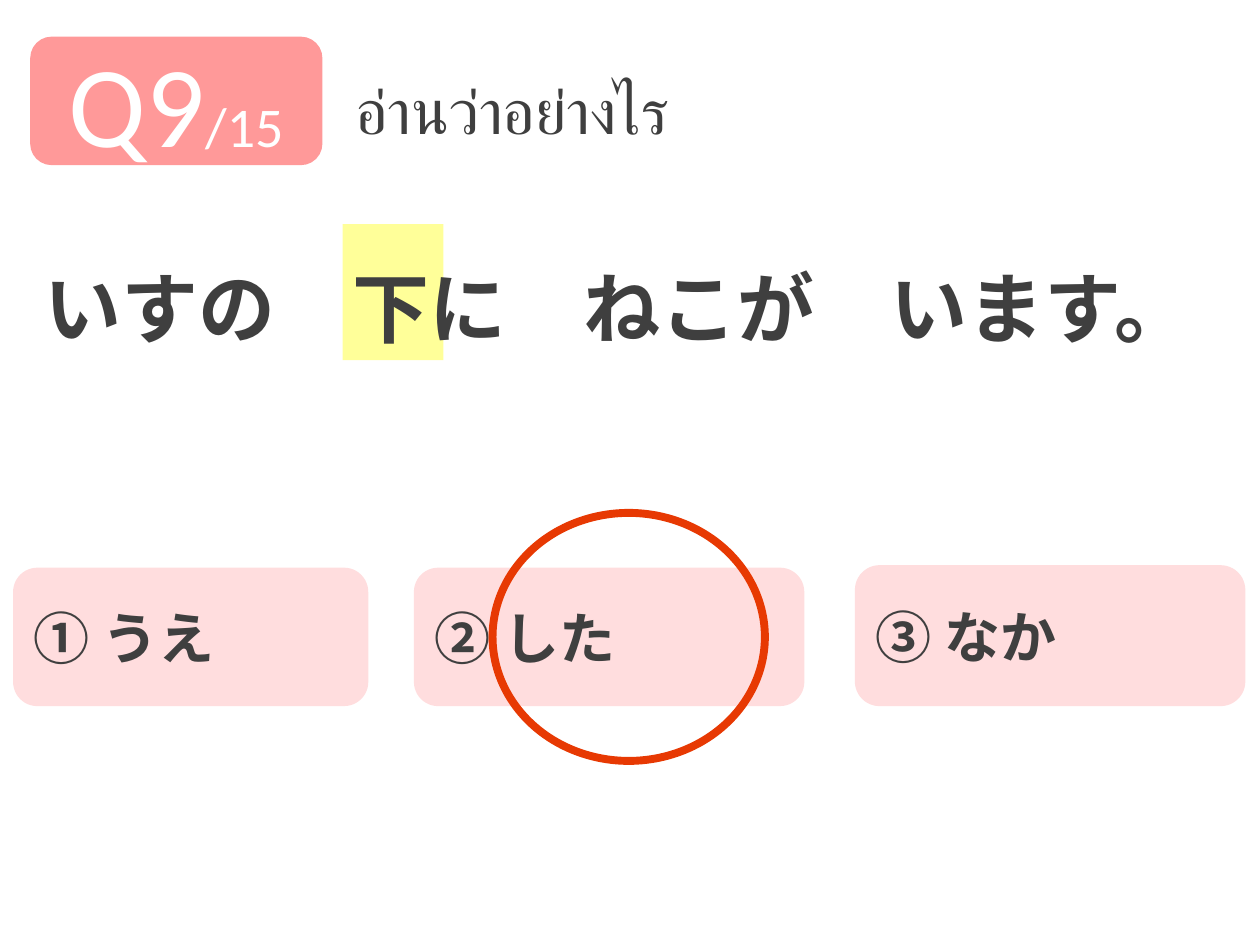
from dataclasses import dataclass

from pptx import Presentation
from pptx.dml.color import RGBColor
from pptx.enum.shapes import MSO_SHAPE
from pptx.enum.text import MSO_ANCHOR, MSO_AUTO_SIZE, PP_ALIGN
from pptx.util import Cm, Pt

RECT, ROUND, OVAL = MSO_SHAPE.RECTANGLE, MSO_SHAPE.ROUNDED_RECTANGLE, MSO_SHAPE.OVAL
MIDDLE, GROW = MSO_ANCHOR.MIDDLE, MSO_AUTO_SIZE.SHAPE_TO_FIT_TEXT
LEFT, CENTER = PP_ALIGN.LEFT, PP_ALIGN.CENTER


@dataclass(frozen=True)
class Theme:
    ink: str = "3F3F3F"
    white: str = "FFFFFF"
    badge: str = "FF9999"
    option: str = "FFDDDE"
    marker: str = "FFFF99"
    ring: str = "E73903"
    body: str = "Roboto"
    title: str = "Calibri"
    number: int = 66
    total: int = 32
    prompt: int = 36
    phrase: int = 44
    answer: int = 32


THEME = Theme()

# Boxes are left, top, width, height in centimetres.
MARKER = (6.91, 4.52, 2.03, 2.74)
BADGE = (0.61, 0.74, 5.89, 2.59)
PROMPT = ("อ่านว่าอย่างไร", (6.91, 1.32, 17.4, 1.8))
PHRASE = ("いすの　下に　ねこが　います。", (0.64, 5.13, 24.05, 2.13))
RING = (9.93, 10.34, 5.49, 5)
BASE = 14.2  # shared lower edge of the answers
ANSWERS = [  # text, left, width, height
    ("① うえ", 0.3, 7.09, 2.72),
    ("② した", 8.38, 7.8, 2.72),
    ("③ なか", 17.27, 7.8, 2.77),
]


def write(frame, text, size, font=THEME.body, color=THEME.ink, bold=False, align=LEFT):
    """Add one run to the frame's first paragraph."""
    frame.word_wrap = True
    para = frame.paragraphs[0]
    para.alignment = align
    run = para.add_run()
    run.text = text
    run.font.name, run.font.size, run.font.bold = font, Pt(size), bold
    run.font.color.rgb = RGBColor.from_string(color)


def draw(slide, kind, box, fill=None, line=None, width=2):
    shape = slide.shapes.add_shape(kind, *map(Cm, box))
    shape.shadow.inherit = False
    if fill:
        shape.fill.solid()
        shape.fill.fore_color.rgb = RGBColor.from_string(fill)
    else:
        shape.fill.background()
    if line:
        shape.line.color.rgb = RGBColor.from_string(line)
        shape.line.width = Pt(width)
    else:
        shape.line.fill.background()
    shape.text_frame.vertical_anchor = MIDDLE
    return shape.text_frame


def label(slide, text, box, size, **style):
    frame = slide.shapes.add_textbox(*map(Cm, box)).text_frame
    write(frame, text, size, **style)
    frame.auto_size = GROW


def main():
    deck = Presentation()
    deck.slide_width, deck.slide_height = Cm(25.4), Cm(19.05)
    slide = deck.slides.add_slide(deck.slide_layouts[6])

    draw(slide, RECT, MARKER, fill=THEME.marker)
    badge = draw(slide, ROUND, BADGE, fill=THEME.badge)
    for text, size in (("Q9", THEME.number), ("/15", THEME.total)):
        write(badge, text, size, font=THEME.title, color=THEME.white, align=CENTER)

    for text, left, width, height in ANSWERS:
        box = (left, BASE - height, width, height)
        frame = draw(slide, ROUND, box, fill=THEME.option, line=THEME.option)
        write(frame, text, THEME.answer, bold=True)

    label(slide, *PHRASE, THEME.phrase, bold=True)
    label(slide, *PROMPT, THEME.prompt)
    draw(slide, OVAL, RING, line=THEME.ring, width=4.5)
    deck.save("out.pptx")


if __name__ == "__main__":
    main()
